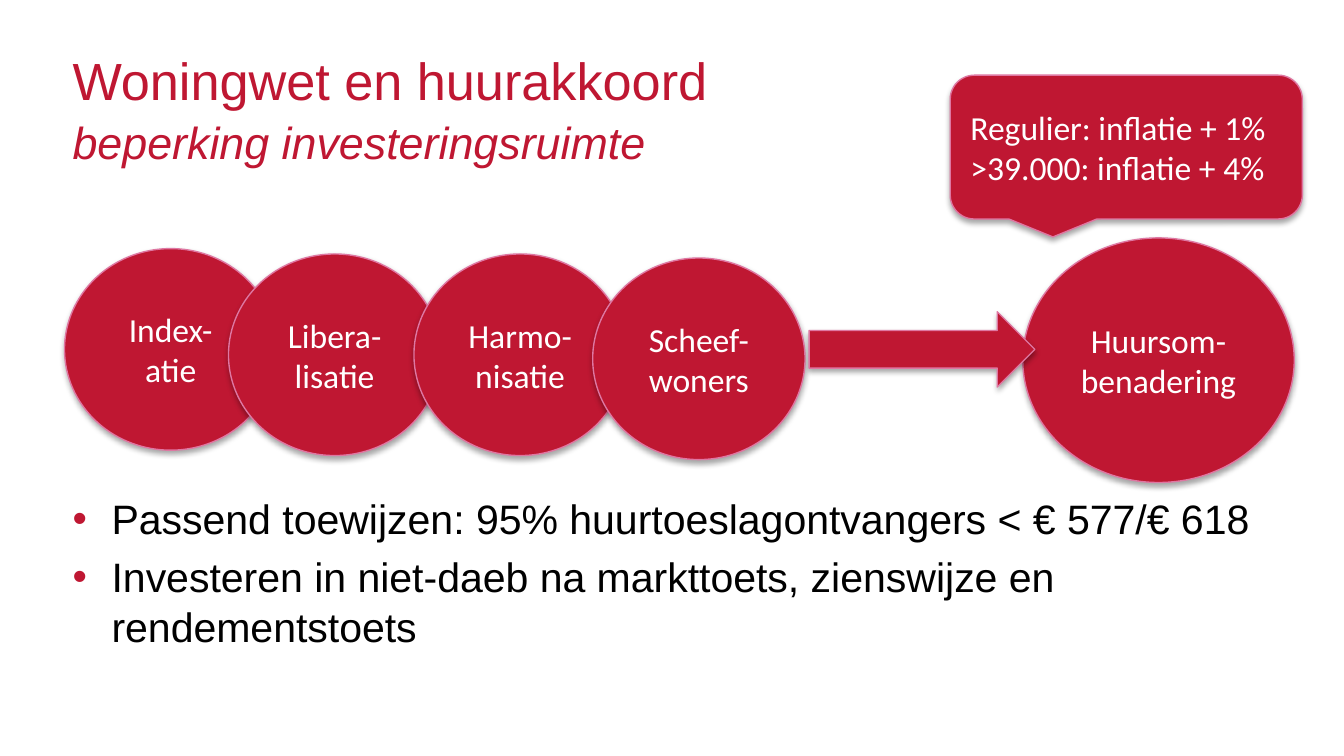
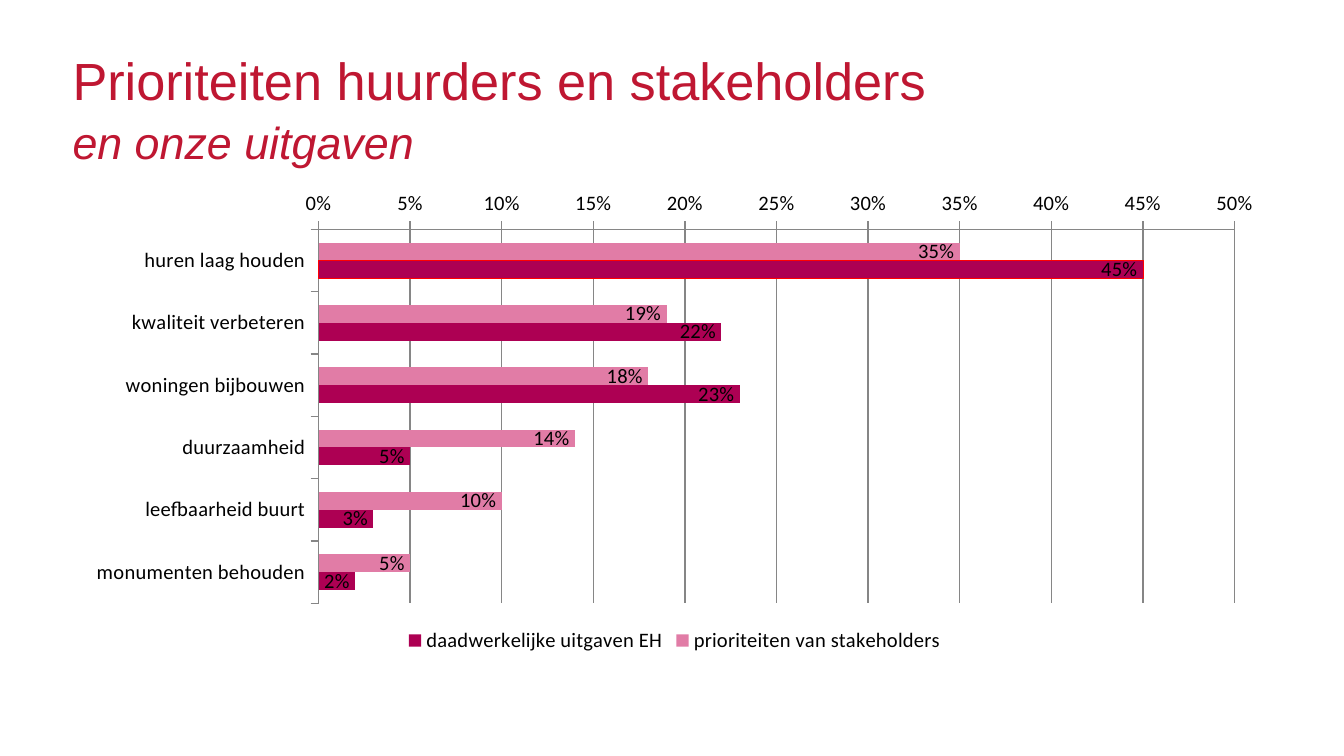
import pptx
import pptx.chart.data
import pptx.dml.color
import pptx.enum.chart
import pptx.enum.shapes
import pptx.enum.text
import pptx.oxml
import pptx.oxml.ns
import pptx.util
from lxml import etree

Inches, Pt = pptx.util.Inches, pptx.util.Pt
SHAPE = pptx.enum.shapes.MSO_SHAPE
ALIGN = pptx.enum.text.PP_ALIGN
ANCHOR = pptx.enum.text.MSO_ANCHOR

# Shared look
RED, PINK_LINE, BLACK, WHITE, GREY = "BF1732", "DF77A2", "000000", "FFFFFF", "868686"
HEAD_FONT, BODY_FONT = "Arial", "Calibri"
TITLE_BOX = (0.54, 0.47, 8.96, 0.71)
CONTENT_BOX = (0.54, 1.35, 8.96, 3.55)


def rgb(value):
    return pptx.dml.color.RGBColor.from_string(value)


def lengths(box):
    return [Inches(v) for v in box]


def sub(parent, tag, **attrs):
    return etree.SubElement(parent, pptx.oxml.ns.qn(tag), attrs)


def style(font, size, color, name, italic=None):
    font.size, font.name, font.italic = Pt(size), name, italic
    font.color.rgb = rgb(color)


def add_run(p, text, size=18, color=WHITE, name=BODY_FONT, italic=None):
    r = p.add_run()
    r.text = text
    style(r.font, size, color, name, italic)


def add_frame(slide, box, anchor=ANCHOR.TOP):
    tf = slide.shapes.add_textbox(*lengths(box)).text_frame
    tf.word_wrap, tf.vertical_anchor = True, anchor
    tf.margin_left = tf.margin_right = tf.margin_top = tf.margin_bottom = 0
    return tf


def add_title(slide, title, subtitle):
    p = add_frame(slide, TITLE_BOX, ANCHOR.MIDDLE).paragraphs[0]
    p.line_spacing = Pt(30.8)
    add_run(p, title, size=28, color=RED, name=HEAD_FONT)
    p.add_line_break()
    add_run(p, subtitle, size=24, color=RED, name=HEAD_FONT, italic=True)


def add_bullets(slide, box, items):
    tf = add_frame(slide, box)
    for i, text in enumerate(items):
        p = tf.paragraphs[0] if i == 0 else tf.add_paragraph()
        pPr = p._p.get_or_add_pPr()
        pPr.set("marL", str(Inches(0.29)))
        pPr.set("indent", str(-Inches(0.29)))
        sub(sub(pPr, "a:buClr"), "a:srgbClr", val=RED)
        sub(pPr, "a:buFont", typeface=HEAD_FONT)
        sub(pPr, "a:buChar", char="•")
        if i:
            p.space_before = Pt(5)
        add_run(p, text, size=22, color=BLACK, name=HEAD_FONT)


def add_red_shape(slide, kind, box, lines=(), align=ALIGN.CENTER):
    sp = slide.shapes.add_shape(kind, *lengths(box))
    sp.fill.solid()
    sp.fill.fore_color.rgb = rgb(RED)
    sp.line.color.rgb = rgb(PINK_LINE)
    sp.line.width = Pt(0.75)
    # Soft shadow straight below
    sp.shadow.inherit = False
    effects = sp._element.spPr.find(pptx.oxml.ns.qn("a:effectLst"))
    shadow = sub(effects, "a:outerShdw", blurRad=str(Pt(3.1)), dist=str(Pt(1.8)),
                 dir="5400000", rotWithShape="0")
    sub(sub(shadow, "a:srgbClr", val=BLACK), "a:alpha", val="35000")
    tf = sp.text_frame
    tf.word_wrap, tf.vertical_anchor = True, ANCHOR.MIDDLE
    for i, text in enumerate(lines):
        p = tf.paragraphs[0] if i == 0 else tf.add_paragraph()
        p.alignment = align
        add_run(p, text)


def add_rent_flow(slide, box):
    """Four overlapping circles, an arrow to the result and its callout."""
    x, y = box[:2]
    circles = [("Index-atie", 0, 1.29), ("Libera-lisatie", 1.22, 1.33),
               ("Harmo-nisatie", 2.6, 1.33), ("Scheef-woners", 3.93, 1.36)]
    for text, dx, dy in circles:
        add_red_shape(slide, SHAPE.OVAL, (x + dx, y + dy, 1.58, 1.5), [text])
    add_red_shape(slide, SHAPE.OVAL, (x + 7.13, y + 1.21, 2.02, 1.82), ["Huursom-benadering"])
    add_red_shape(slide, SHAPE.RIGHT_ARROW, (x + 5.54, y + 1.76, 1.68, 0.56))
    add_red_shape(slide, SHAPE.ROUNDED_RECTANGULAR_CALLOUT, (x + 6.59, y, 2.62, 1.07),
                  ["Regulier: inflatie + 1%", ">39.000: inflatie + 4%"], ALIGN.LEFT)


def add_priority_chart(slide, box):
    data = pptx.chart.data.CategoryChartData(number_format="0%")
    data.categories = ["huren laag houden", "kwaliteit verbeteren", "woningen bijbouwen",
                       "duurzaamheid", "leefbaarheid buurt", "monumenten behouden"]
    data.add_series("prioriteiten van stakeholders", (0.35, 0.19, 0.18, 0.14, 0.1, 0.05))
    data.add_series("daadwerkelijke uitgaven EH", (0.45, 0.22, 0.23, 0.05, 0.03, 0.02))
    enum = pptx.enum.chart
    chart = slide.shapes.add_chart(enum.XL_CHART_TYPE.BAR_CLUSTERED, *lengths(box), data).chart
    style(chart.font, 11, BLACK, BODY_FONT)
    chart.has_title = False
    chart.has_legend = True
    chart.legend.position = enum.XL_LEGEND_POSITION.BOTTOM
    chart.legend.include_in_layout = False

    # Axes
    cat_axis, val_axis = chart.category_axis, chart.value_axis
    cat_axis.reverse_order = True
    val_axis.minimum_scale, val_axis.maximum_scale, val_axis.major_unit = 0, 0.5, 0.05
    val_axis.has_major_gridlines = True
    val_axis.tick_labels.number_format = "0%"
    val_axis.tick_labels.number_format_is_linked = False
    for axis in (cat_axis, val_axis):
        axis.major_tick_mark = enum.XL_TICK_MARK.OUTSIDE
        axis.format.line.color.rgb = rgb(GREY)
    val_axis.major_gridlines.format.line.color.rgb = rgb(GREY)

    # Bars and labels
    plot = chart.plots[0]
    plot.gap_width, plot.overlap, plot.vary_by_categories = 150, 0, False
    for series, color in zip(plot.series, ("E17CA6", "AD0053")):
        series.format.fill.solid()
        series.format.fill.fore_color.rgb = rgb(color)
        labels = series.data_labels
        labels.show_value = True
        labels.position = enum.XL_LABEL_POSITION.INSIDE_END
        labels.number_format, labels.number_format_is_linked = "0%", False
    # Thin highlight around the largest expense
    top = plot.series[1].points[0].format
    top.fill.solid()
    top.fill.fore_color.rgb = rgb("AD0053")
    top.line.color.rgb = rgb("FF0000")
    top.line.width = Pt(0.25)


def main():
    prs = pptx.Presentation()
    # Widescreen, 16:9
    prs.slide_width = Inches(10)
    prs.slide_height = prs.slide_width * 9 // 16
    blank = prs.slide_layouts[6]

    slide = prs.slides.add_slide(blank)
    add_title(slide, "Woningwet en huurakkoord", "beperking investeringsruimte")
    add_bullets(slide, (0.54, 3.67, 9.15, 1.23), [
        "Passend toewijzen: 95% huurtoeslagontvangers < € 577/€ 618",
        "Investeren in niet-daeb na markttoets, zienswijze en rendementstoets"])
    add_rent_flow(slide, (0.48, 0.56, 9.21, 3.03))

    slide = prs.slides.add_slide(blank)
    add_title(slide, "Prioriteiten huurders en stakeholders", "en onze uitgaven")
    add_priority_chart(slide, CONTENT_BOX)

    prs.save("out.pptx")


if __name__ == "__main__":
    main()
